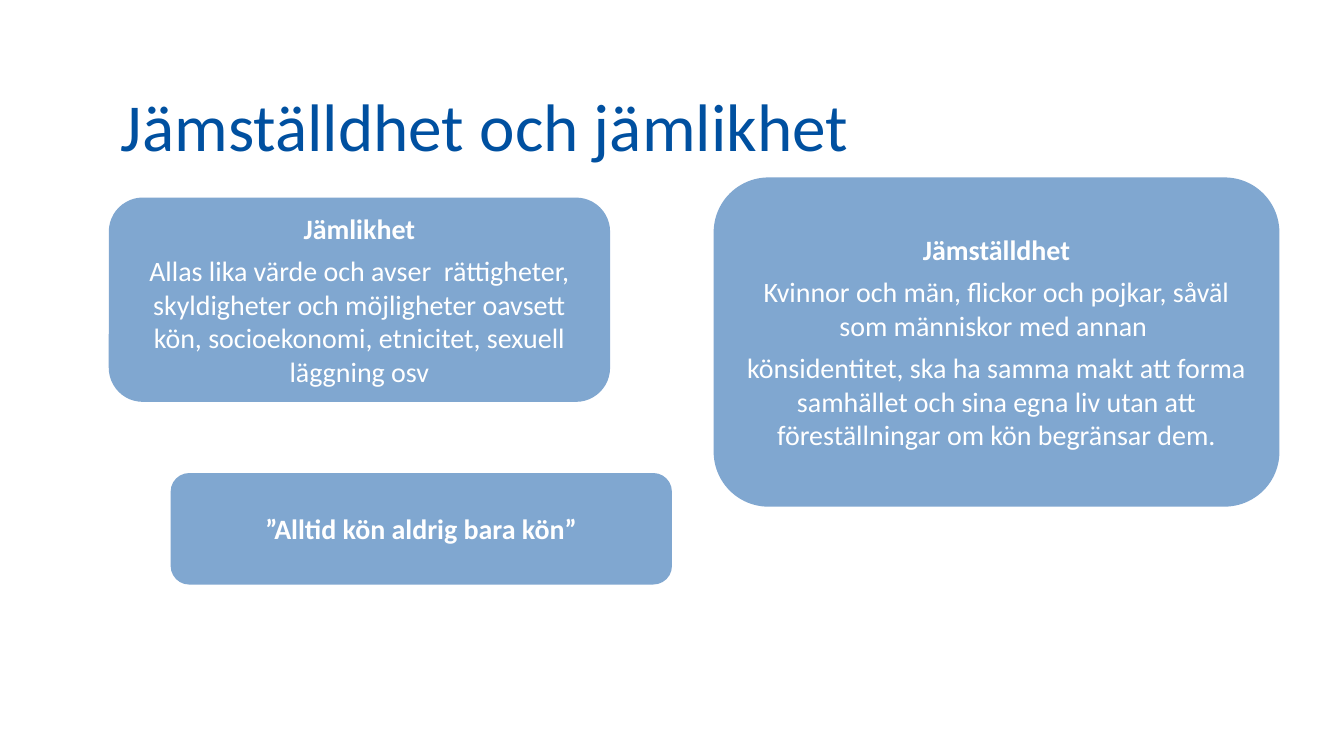
from dataclasses import dataclass

from pptx import Presentation
from pptx import util as u
from pptx.dml import color
from pptx.enum import shapes, text


@dataclass(frozen=True)
class Theme:
    font: str = "Calibri"
    title_color: color.RGBColor = color.RGBColor(0x00, 0x50, 0xA0)
    card_fill: color.RGBColor = color.RGBColor(0x80, 0xA7, 0xD0)
    card_text: color.RGBColor = color.RGBColor(0xFF, 0xFF, 0xFF)
    title_size: int = 36
    card_size: int = 15
    space_after: float = 4.5


THEME = Theme()
TITLE_BOX = (0.83, 0.63, 8.43, 0.64)

# Each card: box, bold heading, body paragraphs
CARDS = [
    ((0.81, 1.47, 3.73, 1.52), "Jämlikhet", [
        "Allas lika värde och avser  rättigheter, skyldigheter och möjligheter "
        "oavsett kön, socioekonomi, etnicitet, sexuell läggning osv",
    ]),
    ((5.31, 1.32, 4.21, 2.45), "Jämställdhet", [
        "Kvinnor och män, flickor och pojkar, såväl som människor med annan ",
        "könsidentitet, ska ha samma makt att forma samhället och sina egna liv "
        "utan att föreställningar om kön begränsar dem.",
    ]),
    ((1.27, 3.52, 3.73, 0.83), "”Alltid kön aldrig bara kön”", []),
]


def apply_format(target, values):
    for name, value in values.items():
        setattr(target, name, value)


def format_frame(frame, anchor):
    apply_format(frame, {
        "word_wrap": True, "auto_size": text.MSO_AUTO_SIZE.NONE,
        "vertical_anchor": anchor,
        "margin_left": u.Inches(0.07), "margin_right": u.Inches(0.07),
        "margin_top": u.Inches(0.04), "margin_bottom": u.Inches(0.04),
    })


def write_paragraph(paragraph, words, size, rgb, bold, alignment):
    run = paragraph.add_run()
    run.text = words
    paragraph.alignment = alignment
    apply_format(run.font, {"name": THEME.font, "size": u.Pt(size), "bold": bold})
    run.font.color.rgb = rgb


def add_title(slide, box, words):
    title = slide.shapes.title
    left, top, width, height = map(u.Inches, box)
    apply_format(title, {"left": left, "top": top, "width": width, "height": height})
    format_frame(title.text_frame, text.MSO_ANCHOR.BOTTOM)
    write_paragraph(title.text_frame.paragraphs[0], words, THEME.title_size,
                    THEME.title_color, False, text.PP_ALIGN.LEFT)


def add_card(slide, box, heading, body):
    card = slide.shapes.add_shape(shapes.MSO_SHAPE.ROUNDED_RECTANGLE,
                                  *map(u.Inches, box))
    card.shadow.inherit = False
    card.fill.solid()
    card.fill.fore_color.rgb = THEME.card_fill
    card.line.fill.background()
    frame = card.text_frame
    format_frame(frame, text.MSO_ANCHOR.MIDDLE)
    for index, words in enumerate([heading, *body]):
        paragraph = frame.add_paragraph() if index else frame.paragraphs[0]
        paragraph.space_after = u.Pt(THEME.space_after)
        write_paragraph(paragraph, words, THEME.card_size, THEME.card_text,
                        index == 0, text.PP_ALIGN.CENTER)


def main():
    presentation = Presentation()
    # Widescreen 16:9
    presentation.slide_width = u.Inches(10)
    presentation.slide_height = presentation.slide_width * 9 // 16
    title_only = presentation.slide_layouts[5]
    slide = presentation.slides.add_slide(title_only)

    add_title(slide, TITLE_BOX, "Jämställdhet och jämlikhet")
    for box, heading, body in CARDS:
        add_card(slide, box, heading, body)

    presentation.save("out.pptx")


if __name__ == "__main__":
    main()
